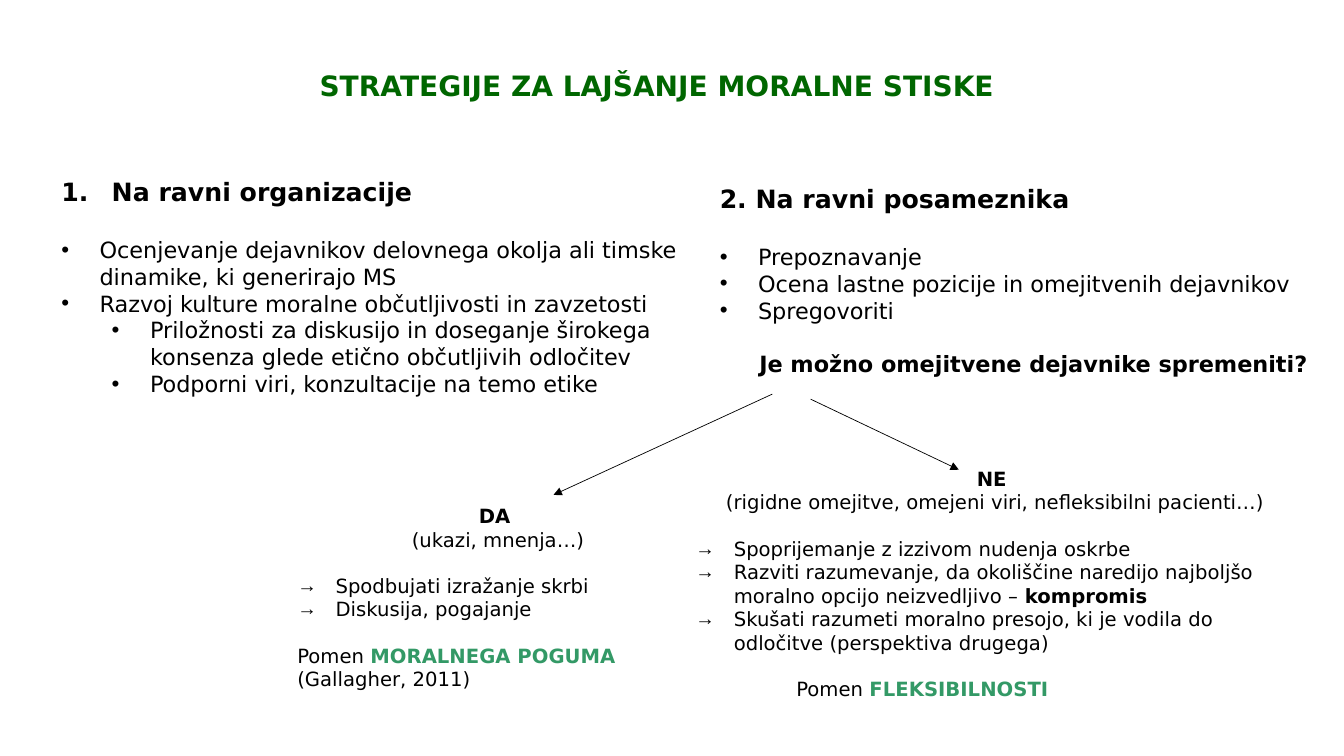
import pptx
import pptx.dml.color
import pptx.enum.shapes
import pptx.enum.text
import pptx.oxml
import pptx.oxml.ns
import pptx.util
from pptx.util import Inches

COLORS = {"title": "006600", "text": "000000", "accent": "339966"}
FONT = "DejaVu Sans"
LINE_HEIGHT = {18: 21, 16: 18.6, 14: 16.3}
CENTER = pptx.enum.text.PP_ALIGN.CENTER


def rgb(name):
    """Return the named colour."""
    return pptx.dml.color.RGBColor.from_string(COLORS[name])


def add_element(parent, tag, **attributes):
    """Append a DrawingML element to its parent."""
    element = pptx.oxml.parse_xml(f"<a:{tag} {pptx.oxml.ns.nsdecls('a')}/>")
    for key, value in attributes.items():
        element.set(key, value)
    parent.append(element)


def add_text_box(slide, left, top, width, height):
    """Add a wrapping text box and return its text frame."""
    shape = slide.shapes.add_textbox(Inches(left), Inches(top), Inches(width), Inches(height))
    shape.text_frame.word_wrap = True
    shape.text_frame.auto_size = pptx.enum.text.MSO_AUTO_SIZE.SHAPE_TO_FIT_TEXT
    return shape.text_frame


def add_text(frame, text, size=14, bold=False, color="text", align=None,
             bullet=None, indent=0, hanging=0.38, level=0, gap=0, strong="",
             strong_color="text"):
    """Add a paragraph, optionally bulleted and ending in a bold phrase."""
    paragraph = frame.paragraphs[0]
    if paragraph.runs:
        paragraph = frame.add_paragraph()
    paragraph.level = level
    paragraph.alignment = align
    paragraph.space_before = pptx.util.Pt(gap)
    properties = paragraph._p.get_or_add_pPr()
    if bullet:
        properties.set("indent", str(-Inches(hanging)))
        indent += hanging
        if bullet == "1.":
            add_element(properties, "buFont", typeface="+mj-lt")
            add_element(properties, "buAutoNum", type="arabicPeriod")
        else:
            add_element(properties, "buFont", typeface="Arial")
            add_element(properties, "buChar", char=bullet)
    properties.set("marL", str(Inches(indent)))
    for words, is_bold, shade in ((text, bold, color), (strong, True, strong_color)):
        if words:
            run = paragraph.add_run()
            run.text = words
            run.font.name = FONT
            run.font.size = pptx.util.Pt(size)
            run.font.bold = is_bold
            run.font.color.rgb = rgb(shade)


def add_bullets(frame, items, bullet="•", size=16, gap=0, **style):
    """Add a bulleted list with a gap above its first item."""
    for index, item in enumerate(items):
        add_text(frame, item, bullet=bullet, size=size, gap=0 if index else gap, **style)


def add_arrow(slide, start, end):
    """Add a thin straight arrow."""
    points = [Inches(value) for value in (*start, *end)]
    connector = slide.shapes.add_connector(pptx.enum.shapes.MSO_CONNECTOR.STRAIGHT, *points)
    connector.line.color.rgb = rgb("text")
    connector.line.width = pptx.util.Pt(0.5)
    add_element(connector.line._get_or_add_ln(), "tailEnd", type="triangle")
    add_element(connector._element.spPr, "effectLst")


def add_organization(slide):
    """Add the strategies at the level of the organization."""
    frame = add_text_box(slide, 0.51, 1.7, 6.53, 2.56)
    add_text(frame, "Na ravni organizacije", size=18, bold=True, bullet="1.", hanging=0.5)
    add_bullets(frame, [
        "Ocenjevanje dejavnikov delovnega okolja ali timske dinamike, ki generirajo MS",
        "Razvoj kulture moralne občutljivosti in zavzetosti",
    ], gap=LINE_HEIGHT[18])
    add_bullets(frame, [
        "Priložnosti za diskusijo in doseganje širokega konsenza glede etično "
        "občutljivih odločitev",
        "Podporni viri, konzultacije na temo etike",
    ], level=1, indent=0.5)


def add_individual(slide):
    """Add the strategies at the level of the individual."""
    frame = add_text_box(slide, 7.04, 1.77, 6.42, 2.05)
    add_text(frame, "2. Na ravni posameznika", size=18, bold=True)
    add_bullets(frame, [
        "Prepoznavanje",
        "Ocena lastne pozicije in omejitvenih dejavnikov",
        "Spregovoriti",
    ], gap=LINE_HEIGHT[18])
    add_text(frame, "Je možno omejitvene dejavnike spremeniti?", size=16, bold=True,
             align=CENTER, gap=LINE_HEIGHT[16])


def add_yes_branch(slide):
    """Add the branch for constraints that can be changed."""
    frame = add_text_box(slide, 2.85, 4.95, 4.18, 2.46)
    add_text(frame, "DA ", bold=True, align=CENTER)
    add_text(frame, "(ukazi, mnenja…)", align=CENTER)
    add_bullets(frame, ["Spodbujati izražanje skrbi", "Diskusija, pogajanje"],
                bullet="→", size=14, gap=LINE_HEIGHT[14])
    add_text(frame, "Pomen ", strong="MORALNEGA POGUMA", strong_color="accent",
             gap=LINE_HEIGHT[14])
    add_text(frame, "(Gallagher, 2011)")


def add_no_branch(slide):
    """Add the branch for constraints that cannot be changed."""
    frame = add_text_box(slide, 6.8, 4.58, 6.14, 2.93)
    add_text(frame, "NE ", bold=True, align=CENTER)
    add_text(frame, "(rigidne omejitve, omejeni viri, nefleksibilni pacienti…)", align=CENTER)
    add_text(frame, "Spoprijemanje z izzivom nudenja oskrbe", bullet="→", gap=LINE_HEIGHT[14])
    add_text(frame, "Razviti razumevanje, da okoliščine naredijo najboljšo moralno opcijo "
             "neizvedljivo – ", bullet="→", strong="kompromis")
    add_text(frame, "Skušati razumeti moralno presojo, ki je vodila do odločitve "
             "(perspektiva drugega)", bullet="→")
    add_text(frame, "Pomen ", strong="FLEKSIBILNOSTI", strong_color="accent",
             indent=1, gap=LINE_HEIGHT[14])


def main():
    """Build the slide and save it."""
    presentation = pptx.Presentation()
    presentation.slide_width = Inches(13.33)
    presentation.slide_height = Inches(7.5)
    slide = presentation.slides.add_slide(presentation.slide_layouts[6])
    title = add_text_box(slide, 0.09, 0.63, 12.85, 0.74)
    add_text(title, "STRATEGIJE ZA LAJŠANJE MORALNE STISKE", size=20, bold=True,
             color="title", align=CENTER)
    add_organization(slide)
    add_individual(slide)
    add_yes_branch(slide)
    add_no_branch(slide)
    add_arrow(slide, (7.66, 3.91), (5.49, 4.91))
    add_arrow(slide, (8.04, 3.96), (9.51, 4.66))
    presentation.save("out.pptx")


if __name__ == "__main__":
    main()
